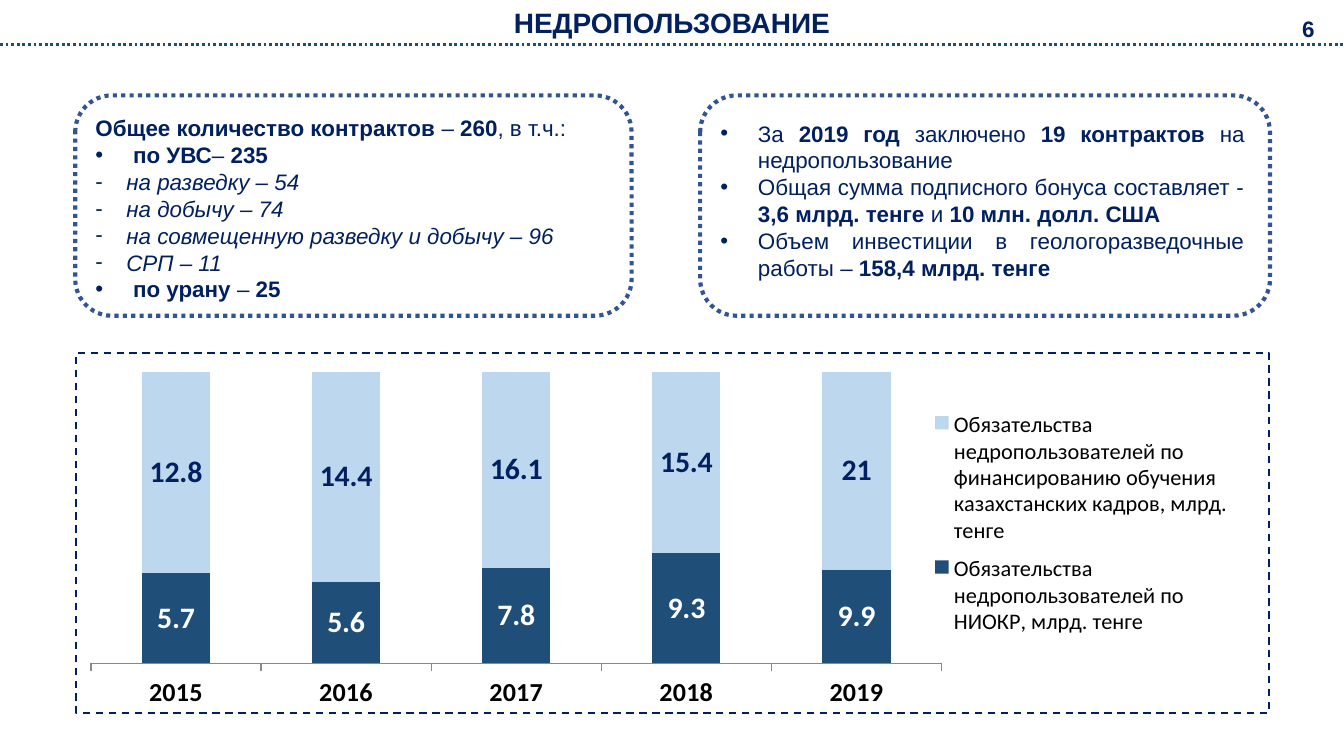
from typing import NamedTuple

from lxml import etree
from pptx import Presentation, util as u
from pptx.chart.data import CategoryChartData
from pptx.dml.color import RGBColor
from pptx.enum import chart as ch, dml, shapes, text
from pptx.oxml import ns, parse_xml

NAVY = RGBColor(0x00, 0x20, 0x60)
BLUE = RGBColor(0x32, 0x54, 0x91)
STEEL = RGBColor(0x1F, 0x4E, 0x79)
SKY = RGBColor(0xBD, 0xD7, 0xEE)
GREY = RGBColor(0x89, 0x89, 0x89)
BLACK = RGBColor(0, 0, 0)
WHITE = RGBColor(255, 255, 255)
DOTS = dml.MSO_LINE.ROUND_DOT  # written as sysDot
FULL, MID = text.PP_ALIGN.JUSTIFY, text.PP_ALIGN.CENTER


class Box(NamedTuple):
    x: float
    y: float
    w: float
    h: float


class Run(NamedTuple):
    words: str
    bold: bool = False
    slant: bool = False


class Para(NamedTuple):
    runs: list[Run]
    mark: str = ""
    indent: float = 0.28


class Series(NamedTuple):
    name: str
    vals: list[float]
    fill: RGBColor
    ink: RGBColor


def bold(words: str) -> Run:
    return Run(words, True)


def dash(words: str) -> Para:
    return Para([Run(words, slant=True)], "-", 0.23)


def place(box: Box) -> list[u.Length]:
    return [u.Inches(v) for v in box]


def add_text(slide, box: Box, paras: list[Para], size: int = 12, align=MID) -> None:
    frame = slide.shapes.add_textbox(*place(box)).text_frame
    frame.word_wrap = True
    frame.auto_size = text.MSO_AUTO_SIZE.SHAPE_TO_FIT_TEXT
    frame.margin_left = frame.margin_right = u.Inches(0.07)
    frame.margin_top = frame.margin_bottom = u.Inches(0.04)
    for n, para in enumerate(paras):
        line = frame.add_paragraph() if n else frame.paragraphs[0]
        line.alignment = align
        for item in para.runs:
            run = line.add_run()
            run.text = item.words
            font = run.font
            font.name, font.size = "Arial", u.Pt(size)
            font.bold, font.italic = item.bold, item.slant
            font.color.rgb = NAVY
        if para.mark:
            props = line._p.get_or_add_pPr()
            step = u.Inches(para.indent)
            props.set("marL", str(step))
            props.set("indent", str(-step))
            etree.SubElement(props, ns.qn("a:buFont")).set("typeface", "Arial")
            etree.SubElement(props, ns.qn("a:buChar")).set("char", para.mark)


def add_frame(slide, box: Box) -> None:
    shape = slide.shapes.add_shape(shapes.MSO_SHAPE.ROUNDED_RECTANGLE, *place(box))
    shape.shadow.inherit = False
    shape.fill.background()
    shape.line.color.rgb = BLUE
    shape.line.width = u.Pt(2.25)
    shape.line.dash_style = DOTS


def add_rule(slide, y: float, width: float) -> None:
    rule = slide.shapes.add_connector(
        shapes.MSO_CONNECTOR.STRAIGHT, 0, u.Inches(y), u.Inches(width), u.Inches(y))
    rule.line.color.rgb = STEEL
    rule.line.width = u.Pt(1.5)
    rule.line.dash_style = DOTS
    etree.SubElement(rule._element.spPr, ns.qn("a:effectLst"))


def make_layout(part: Box, whole: Box, inner: bool = False):
    """Lay out a chart part, given in inches from the chart's corner."""
    items = [("layoutTarget", "inner")] if inner else []
    items += [("xMode", "edge"), ("yMode", "edge"),
              ("x", part.x / whole.w), ("y", part.y / whole.h),
              ("w", part.w / whole.w), ("h", part.h / whole.h)]
    spots = "".join(f'<c:{k} val="{v}"/>' for k, v in items)
    return parse_xml(f'<c:layout {ns.nsdecls("c")}>'
                     f'<c:manualLayout>{spots}</c:manualLayout></c:layout>')


def add_bars(slide, box: Box, years: list[str], rows: list[Series]) -> None:
    data = CategoryChartData()
    data.categories = years
    for row in rows:
        data.add_series(row.name, row.vals)
    chart = slide.shapes.add_chart(
        ch.XL_CHART_TYPE.COLUMN_STACKED_100, *place(box), data).chart
    chart.has_title = False
    chart.font.name, chart.font.size = "Calibri", u.Pt(18)
    chart.font.color.rgb = BLACK

    # Legend
    chart.has_legend = True
    chart.legend.position = ch.XL_LEGEND_POSITION.RIGHT
    chart.legend.include_in_layout = False
    chart.legend.font.size = u.Pt(12)

    # Axes
    axis = chart.category_axis
    axis.major_tick_mark = ch.XL_TICK_MARK.OUTSIDE
    axis.tick_labels.font.size = u.Pt(14)
    axis.tick_labels.font.bold = True
    axis.format.line.color.rgb = GREY
    chart.value_axis.visible = False
    chart.value_axis.has_major_gridlines = False

    # Columns and labels
    plot = chart.plots[0]
    plot.gap_width, plot.overlap = 150, 100
    plot.vary_by_categories = False
    for series, row in zip(plot.series, rows):
        series.format.fill.solid()
        series.format.fill.fore_color.rgb = row.fill
        labels = series.data_labels
        labels.show_value = True
        labels.font.size, labels.font.bold = u.Pt(16), True
        labels.font.color.rgb = row.ink

    # Plot and legend positions
    root = chart.element
    area = root.find(".//" + ns.qn("c:plotArea"))
    key = root.find(".//" + ns.qn("c:legend"))
    for part in (area, key):
        for old in part.findall(ns.qn("c:layout")):
            part.remove(old)
    area.insert(0, make_layout(Box(0.11, 0.14, 6.34, 2.18), box, True))
    key.find(ns.qn("c:legendPos")).addnext(
        make_layout(Box(6.29, 0.35, 2.4, 1.85), box))

    # Dashed border
    root.find(ns.qn("c:chart")).addnext(parse_xml(
        f'<c:spPr {ns.nsdecls("c", "a")}><a:noFill/><a:ln w="{u.Pt(1)}"><a:solidFill>'
        f'<a:srgbClr val="{NAVY}"/></a:solidFill><a:prstDash val="dash"/></a:ln></c:spPr>'))


DEALS = [
    Para([bold("Общее количество контрактов "), Run("–"), bold(" 260"), Run(", в т.ч.:")]),
    Para([bold("по УВС"), Run("– "), bold("235")], "•"),
    dash("на разведку – 54"),
    dash("на добычу – 74"),
    dash("на совмещенную разведку и добычу – 96"),
    dash("СРП – 11"),
    Para([bold("по урану "), Run("– "), bold("25")], "•"),
]
FACTS = [
    Para([Run("За "), bold("2019 год "), Run("заключено "), bold("19 контрактов "),
          Run("на недропользование ")], "•"),
    Para([Run("Общая сумма подписного бонуса составляет - "), bold("3,6 млрд. тенге "),
          Run("и "), bold("10 млн. долл. США")], "•"),
    Para([Run("Объем инвестиции в геологоразведочные работы "), Run("– ", slant=True),
          bold("158,4 млрд. тенге")], "•"),
]
DUTIES = [
    Series("Обязательства недропользователей по НИОКР, млрд. тенге",
           [5.7, 5.6, 7.8, 9.3, 9.9], STEEL, WHITE),
    Series("Обязательства недропользователей по финансированию обучения "
           "казахстанских кадров, млрд. тенге",
           [12.8, 14.4, 16.1, 15.4, 21], SKY, NAVY),
]


def main() -> None:
    deck = Presentation()
    deck.slide_width, deck.slide_height = u.Inches(10), u.Inches(10 * 9 / 16)
    slide = deck.slides.add_slide(deck.slide_layouts[6])

    # Contract facts in dotted frames
    add_text(slide, Box(0.64, 0.81, 3.91, 1.49), DEALS, align=FULL)
    add_text(slide, Box(5.29, 0.85, 4.04, 1.29), FACTS, align=FULL)
    add_frame(slide, Box(0.56, 0.71, 4.14, 1.64))
    add_frame(slide, Box(5.21, 0.71, 4.24, 1.64))

    # Heading
    add_text(slide, Box(0, 0, 10, 0.33), [Para([bold("НЕДРОПОЛЬЗОВАНИЕ")])], 15)
    add_rule(slide, 0.33, 10)

    # Duties by year
    years = [str(y) for y in range(2015, 2020)]
    add_bars(slide, Box(0.56, 2.62, 8.89, 2.69), years, DUTIES)

    # Page number
    add_text(slide, Box(9.47, 0.07, 0.53, 0.28), [Para([bold("6")])])
    deck.save("out.pptx")


if __name__ == "__main__":
    main()
